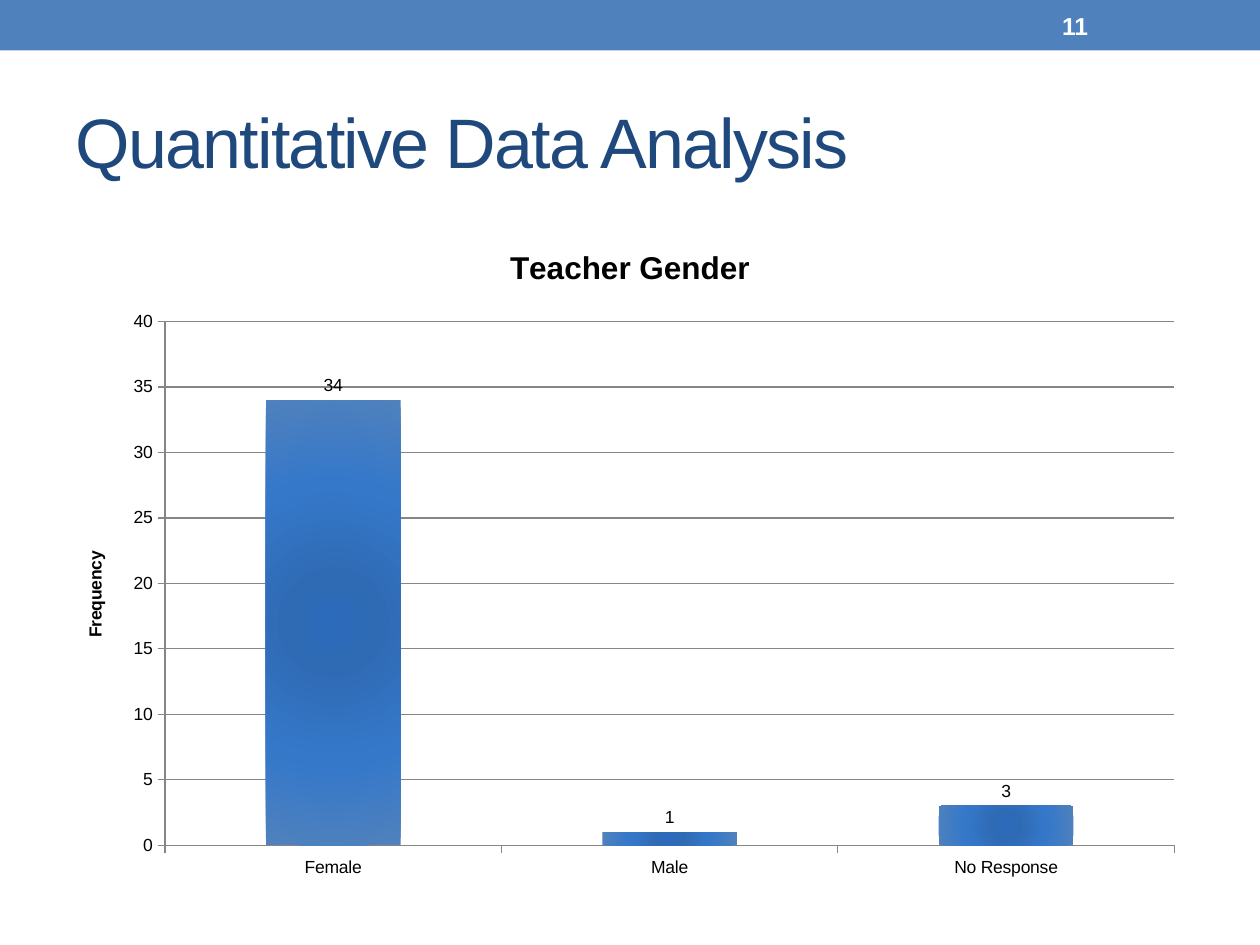
import pptx
import pptx.chart.data
import pptx.dml.color
import pptx.enum.chart
import pptx.enum.shapes
import pptx.enum.text
import pptx.oxml
import pptx.oxml.ns
import pptx.util
from pptx.util import Cm, Pt

BLUE = pptx.dml.color.RGBColor(0x4F, 0x81, 0xBD)
NAVY = pptx.dml.color.RGBColor(0x1F, 0x49, 0x7D)
GREY = pptx.dml.color.RGBColor(0x86, 0x86, 0x86)
BLACK = pptx.dml.color.RGBColor(0, 0, 0)
WHITE = pptx.dml.color.RGBColor(0xFF, 0xFF, 0xFF)
FONT = "Arial"

# Radial gradient of the bars, from the centre outwards (thousandths of a percent)
BAR_STOPS = [
    (0, pptx.dml.color.RGBColor(0x2C, 0x6A, 0xBC)),
    (20000, pptx.dml.color.RGBColor(0x2F, 0x6B, 0xB5)),
    (60000, pptx.dml.color.RGBColor(0x35, 0x78, 0xCA)),
    (100000, BLUE),
]


def style_font(font, size, color, bold=False):
    font.name, font.size, font.bold = FONT, Pt(size), bold
    font.color.rgb = color


def add_run(frame, text, size, color, bold=False):
    run = frame.paragraphs[0].add_run()
    run.text = text
    style_font(run.font, size, color, bold)
    return run


def add_header(slide, left, top, width, height):
    band = slide.shapes.add_shape(
        pptx.enum.shapes.MSO_SHAPE.RECTANGLE, left, top, width, height)
    band.shadow.inherit = False
    band.fill.solid()
    band.fill.fore_color.rgb = BLUE
    band.line.fill.background()

    # Page number near the right end of the band
    number = slide.shapes.add_textbox(
        left + width - Cm(4.24), top + Cm(0.05), Cm(2.97), height - Cm(0.1))
    frame = number.text_frame
    frame.word_wrap = True
    frame.margin_top = frame.margin_bottom = 0
    frame.vertical_anchor = pptx.enum.text.MSO_ANCHOR.MIDDLE
    add_run(frame, "11", 14, WHITE, True)


def place_title(slide, left, top, width, height):
    title = slide.shapes.title
    title.left, title.top, title.width, title.height = left, top, width, height
    frame = title.text_frame
    frame.vertical_anchor = pptx.enum.text.MSO_ANCHOR.MIDDLE
    frame.paragraphs[0].alignment = pptx.enum.text.PP_ALIGN.LEFT
    heading = add_run(frame, "Quantitative Data Analysis", 40, NAVY)
    heading._r.get_or_add_rPr().set("spc", "-100")


def fill_bars(series):
    series.format.fill.solid()
    stops = "".join(f'<a:gs pos="{pos}"><a:srgbClr val="{color}"/></a:gs>'
                    for pos, color in BAR_STOPS)
    gradient = pptx.oxml.parse_xml(
        f'<a:gradFill {pptx.oxml.ns.nsdecls("a")} rotWithShape="1">'
        f'<a:gsLst>{stops}</a:gsLst><a:path path="circle">'
        '<a:fillToRect l="50000" t="50000" r="50000" b="50000"/>'
        '</a:path></a:gradFill>')
    properties = series._element.get_or_add_spPr()
    solid = properties.find(pptx.oxml.ns.qn("a:solidFill"))
    properties.replace(solid, gradient)


def set_plot_area(chart, x, y, w, h):
    """Place the inner plot area, as fractions of the chart box."""
    plot_area = chart._chartSpace.chart.plotArea
    for old in plot_area.findall(pptx.oxml.ns.qn("c:layout")):
        plot_area.remove(old)
    sizes = "".join(f'<c:{tag} val="{value}"/>'
                    for tag, value in zip("xywh", (x, y, w, h)))
    plot_area.insert(0, pptx.oxml.parse_xml(
        f'<c:layout {pptx.oxml.ns.nsdecls("c")}><c:manualLayout>'
        '<c:layoutTarget val="inner"/><c:xMode val="edge"/>'
        f'<c:yMode val="edge"/>{sizes}</c:manualLayout></c:layout>'))


def add_gender_chart(slide, left, top, width, height):
    data = pptx.chart.data.CategoryChartData()
    data.categories = ["Female", "Male", "No Response"]
    data.add_series("Series 1", [34, 1, 3])
    chart = slide.shapes.add_chart(
        pptx.enum.chart.XL_CHART_TYPE.COLUMN_CLUSTERED,
        left, top, width, height, data).chart
    style_font(chart.font, 10, BLACK)
    chart.has_legend = False
    chart.has_title = True
    add_run(chart.chart_title.text_frame, "Teacher Gender", 18, BLACK, True)
    set_plot_area(chart, 0.09, 0.15, 0.89, 0.78)

    # Axes
    frequency, gender = chart.value_axis, chart.category_axis
    for axis in (frequency, gender):
        axis.major_tick_mark = pptx.enum.chart.XL_TICK_MARK.OUTSIDE
        axis.format.line.color.rgb = GREY
        axis.format.line.width = Pt(0.75)
    frequency.minimum_scale, frequency.maximum_scale = 0, 40
    frequency.major_unit = 5
    frequency.has_major_gridlines = True
    frequency.major_gridlines.format.line.color.rgb = GREY
    frequency.major_gridlines.format.line.width = Pt(0.75)
    add_run(frequency.axis_title.text_frame, "Frequency", 10, BLACK, True)

    # Bars and their values
    bars = chart.plots[0]
    bars.gap_width = 150
    bars.vary_by_categories = False
    fill_bars(bars.series[0])
    labels = bars.series[0].data_labels
    labels.show_value = True
    labels.position = pptx.enum.chart.XL_LABEL_POSITION.OUTSIDE_END
    style_font(labels.font, 10, BLACK)


def main():
    deck = pptx.Presentation()
    deck.slide_width, deck.slide_height = Cm(25.4), Cm(19.05)
    slide = deck.slides.add_slide(deck.slide_layouts.get_by_name("Title Only"))
    margin = Cm(1.27)
    content_width = deck.slide_width - 2 * margin
    add_header(slide, 0, 0, deck.slide_width, Cm(1.02))
    place_title(slide, margin, Cm(1.47), content_width, Cm(2.74))
    add_gender_chart(slide, margin, Cm(4.45), content_width, Cm(13.54))
    deck.save("out.pptx")


if __name__ == "__main__":
    main()
